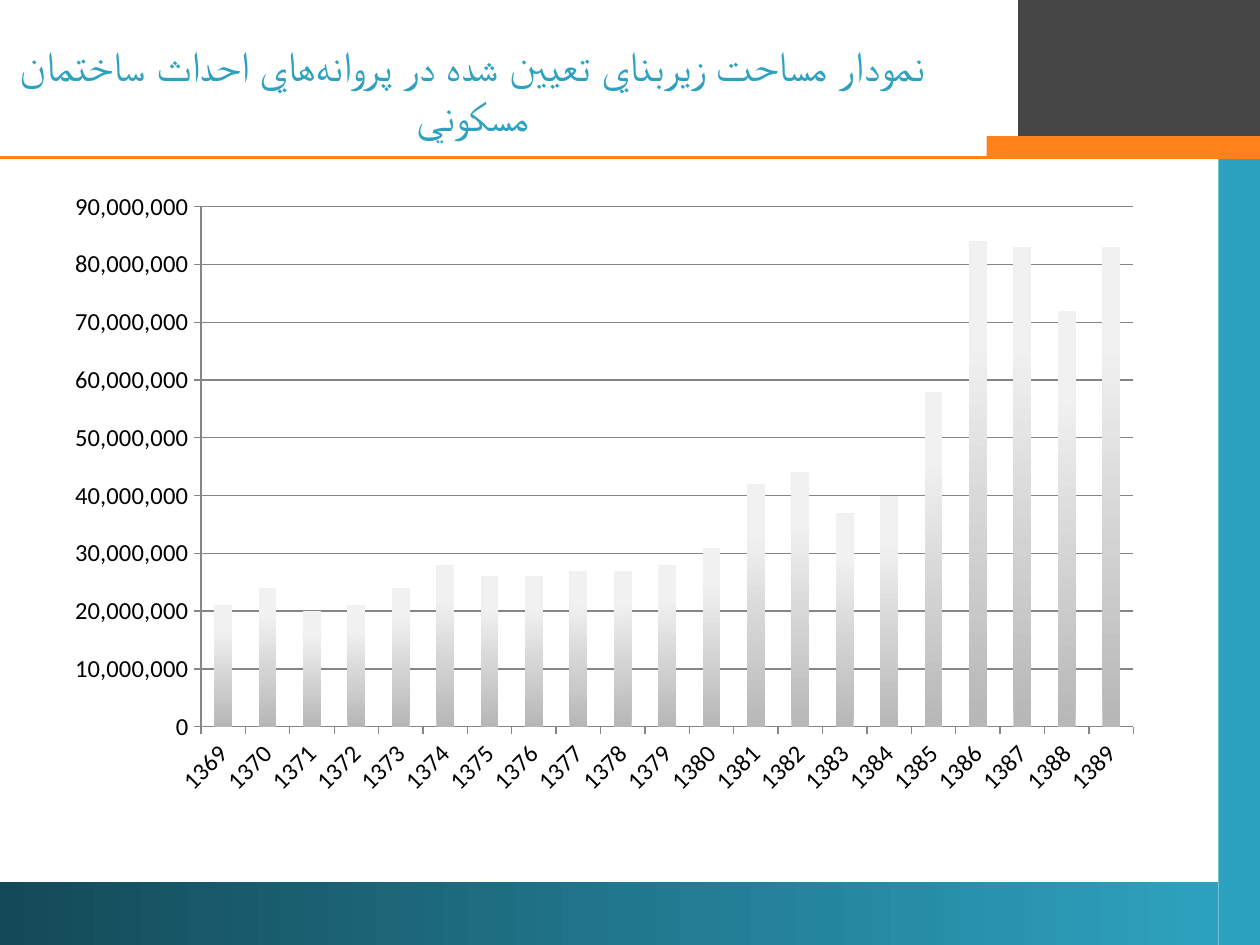
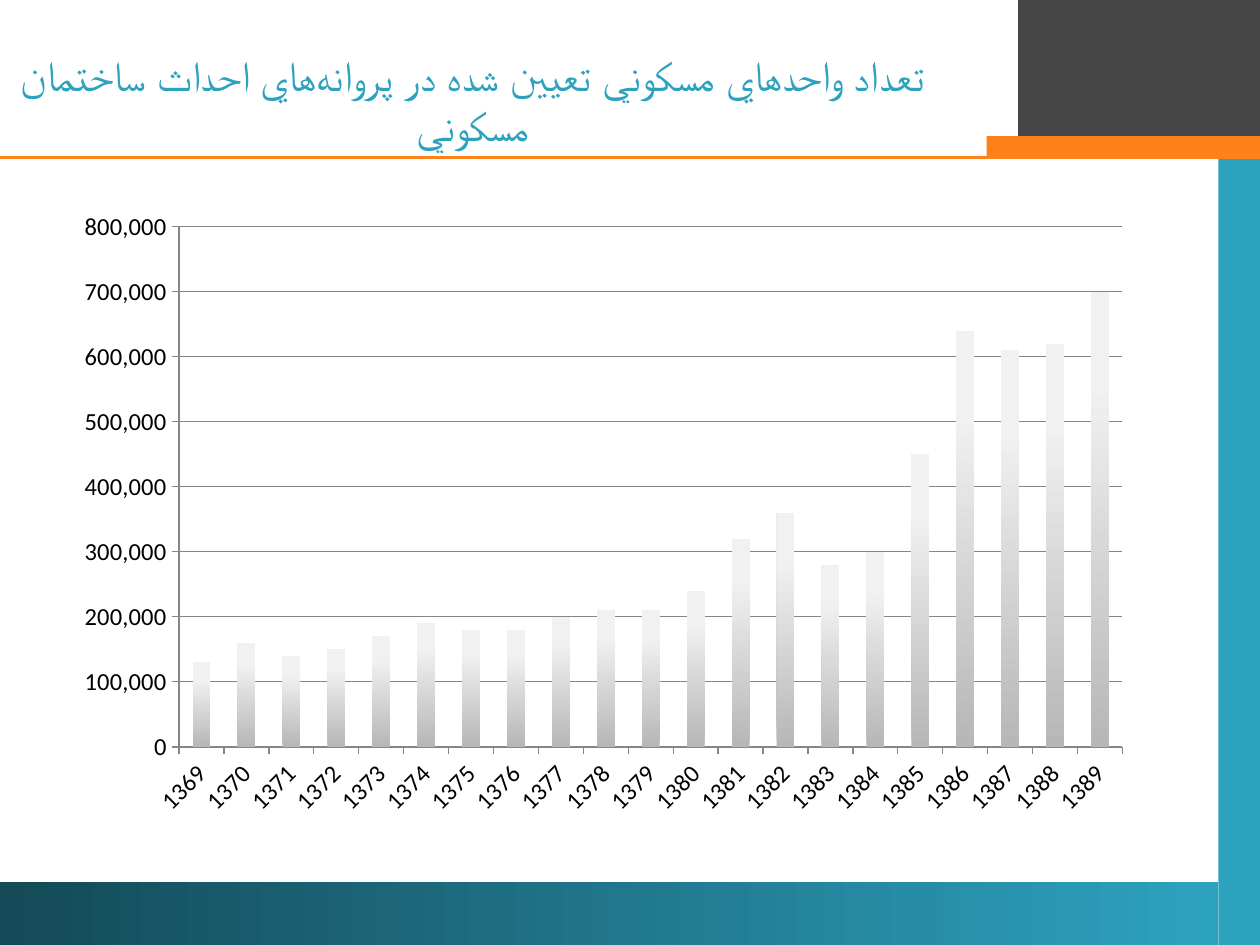
from pptx import Presentation
from pptx.chart.data import CategoryChartData
from pptx.dml.color import RGBColor
from pptx.enum.chart import XL_CHART_TYPE, XL_TICK_MARK
from pptx.enum.shapes import MSO_CONNECTOR, MSO_SHAPE
from pptx.enum.text import MSO_ANCHOR, PP_ALIGN
from pptx.oxml.ns import qn
from pptx.util import Inches, Pt
from lxml import etree

COLUMNS = XL_CHART_TYPE.COLUMN_CLUSTERED
TICK_OUTSIDE = XL_TICK_MARK.OUTSIDE
TICK_NONE = XL_TICK_MARK.NONE
STRAIGHT = MSO_CONNECTOR.STRAIGHT
RECTANGLE = MSO_SHAPE.RECTANGLE
MIDDLE = MSO_ANCHOR.MIDDLE
CENTER = PP_ALIGN.CENTER

TEAL, DEEP_TEAL = "2DA2BF", "144A58"
ORANGE, CHARCOAL = "FF8119", "464646"
BLACK, AXIS_GRAY = "000000", "868686"
BAR_BOTTOM, BAR_TOP = "B7B7B7", "F1F1F1"
TITLE_FONT, AXIS_FONT = "Arial", "Calibri"

NON_JOINER = chr(0x200C)
PERMITS = f"پروانه{NON_JOINER * 2}هاي احداث ساختمان مسكوني"
AREA_TITLE = f"نمودار مساحت زيربناي تعيين شده در {PERMITS}"
UNITS_TITLE = f"تعداد واحد{NON_JOINER}هاي مسكوني تعيين شده در {PERMITS}"

YEARS = [str(year) for year in range(1369, 1390)]
FLOOR_AREA_MILLIONS = [21, 24, 20, 21, 24, 28, 26, 26, 27, 27, 28, 31, 42, 44,
                       37, 40, 58, 84, 83, 72, 83]
UNITS_TEN_THOUSANDS = [13, 16, 14, 15, 17, 19, 18, 18, 20, 21, 21, 24, 32, 36,
                       28, 30, 45, 64, 61, 62, 70]


def color(hex_string):
    """Turn a hex string into a colour."""
    return RGBColor.from_string(hex_string)


def box(left, top, width, height):
    """Give a position and size in inches."""
    return Inches(left), Inches(top), Inches(width), Inches(height)


class Deck:
    """Holds the presentation style and the current slide."""

    def __init__(self):
        """Start an empty presentation."""
        self.presentation = Presentation()
        self.presentation.slide_width = Inches(10)
        self.presentation.slide_height = Inches(7.5)
        self.slide = None

    def add_slide(self):
        """Add a slide with the shared bands."""
        layout = self.presentation.slide_layouts[6]
        self.slide = self.presentation.slides.add_slide(layout)
        self.band(9.67, 0.25, 0.33, 7.25, TEAL)
        footer = self.band(0, 7, 9.67, 0.5, DEEP_TEAL)
        self.gradient(footer.fill, DEEP_TEAL, TEAL, 0)
        self.band(8.08, 0, 1.92, 1.08, CHARCOAL)
        self.rule(10, 0, 1.25)
        self.band(7.83, 1.08, 2.17, 0.17, ORANGE)

    def band(self, left, top, width, height, fill):
        """Draw a plain rectangle without outline."""
        shape = self.slide.shapes.add_shape(RECTANGLE, *box(left, top, width, height))
        shape.shadow.inherit = False
        shape.fill.solid()
        shape.fill.fore_color.rgb = color(fill)
        shape.line.fill.background()
        return shape

    def gradient(self, fill, start, end, angle, end_position=1.0):
        """Give a fill a two-colour gradient."""
        fill.gradient()
        fill.gradient_angle = angle
        first, last = fill.gradient_stops
        first.color.rgb, first.position = color(start), 0
        last.color.rgb, last.position = color(end), end_position

    def rule(self, start, end, top):
        """Draw the horizontal line under the title."""
        connector = self.slide.shapes.add_connector(
            STRAIGHT, Inches(start), Inches(top), Inches(end), Inches(top))
        connector.line.color.rgb = color(ORANGE)
        connector.line.width = Pt(2.25)
        properties = connector._element.find(qn("p:spPr"))
        etree.SubElement(properties, qn("a:effectLst"))

    def title(self, text, top):
        """Write a centred right-to-left title."""
        frame = self.slide.shapes.add_textbox(*box(0, top, 7.5, 0.58)).text_frame
        frame.word_wrap = True
        frame.vertical_anchor = MIDDLE
        paragraph = frame.paragraphs[0]
        paragraph.alignment = CENTER
        paragraph._p.get_or_add_pPr().set("rtl", "1")
        run = paragraph.add_run()
        run.text = text
        run.font.size = Pt(24)
        run.font.name = TITLE_FONT
        run.font.color.rgb = color(TEAL)
        complex_font = etree.SubElement(run._r.get_or_add_rPr(), qn("a:cs"))
        complex_font.set("typeface", TITLE_FONT)

    def style_axis(self, axis):
        """Set the ticks, line and labels of an axis."""
        axis.major_tick_mark = TICK_OUTSIDE
        axis.minor_tick_mark = TICK_NONE
        axis.format.line.color.rgb = color(AXIS_GRAY)
        font = axis.tick_labels.font
        font.size = Pt(14)
        font.name = AXIS_FONT
        font.color.rgb = color(BLACK)

    def column_chart(self, position, values, maximum, step):
        """Draw yearly values as gradient columns."""
        data = CategoryChartData(number_format="#,##0")
        data.categories = YEARS
        data.add_series("Series 1", values)
        chart = self.slide.shapes.add_chart(COLUMNS, *box(*position), data).chart
        chart.has_legend = False
        chart.has_title = False
        chart.font.size = Pt(10)
        chart.font.name = TITLE_FONT
        chart.font.color.rgb = color(BLACK)

        years, amounts = chart.category_axis, chart.value_axis
        self.style_axis(years)
        self.style_axis(amounts)
        years._element.find(qn("c:txPr")).find(qn("a:bodyPr")).set("rot", "-2700000")
        amounts.minimum_scale = 0
        amounts.maximum_scale = maximum
        amounts.major_unit = step
        amounts.tick_labels.number_format = "#,##0"
        amounts.tick_labels.number_format_is_linked = False
        amounts.major_gridlines.format.line.color.rgb = color(AXIS_GRAY)

        plot = chart.plots[0]
        plot.gap_width = 150
        plot.vary_by_categories = False
        self.gradient(plot.series[0].format.fill, BAR_BOTTOM, BAR_TOP, 90, 0.8)


def main():
    """Build both slides and save them."""
    deck = Deck()

    deck.add_slide()
    deck.column_chart((0.42, 1.42, 8.75, 5),
                      [value * 1_000_000 for value in FLOOR_AREA_MILLIONS],
                      90_000_000, 10_000_000)
    deck.title(AREA_TITLE, 0.42)

    deck.add_slide()
    deck.column_chart((0.5, 1.58, 8.58, 5),
                      [value * 10_000 for value in UNITS_TEN_THOUSANDS],
                      800_000, 100_000)
    deck.title(UNITS_TITLE, 0.5)

    deck.presentation.save("out.pptx")


if __name__ == "__main__":
    main()
